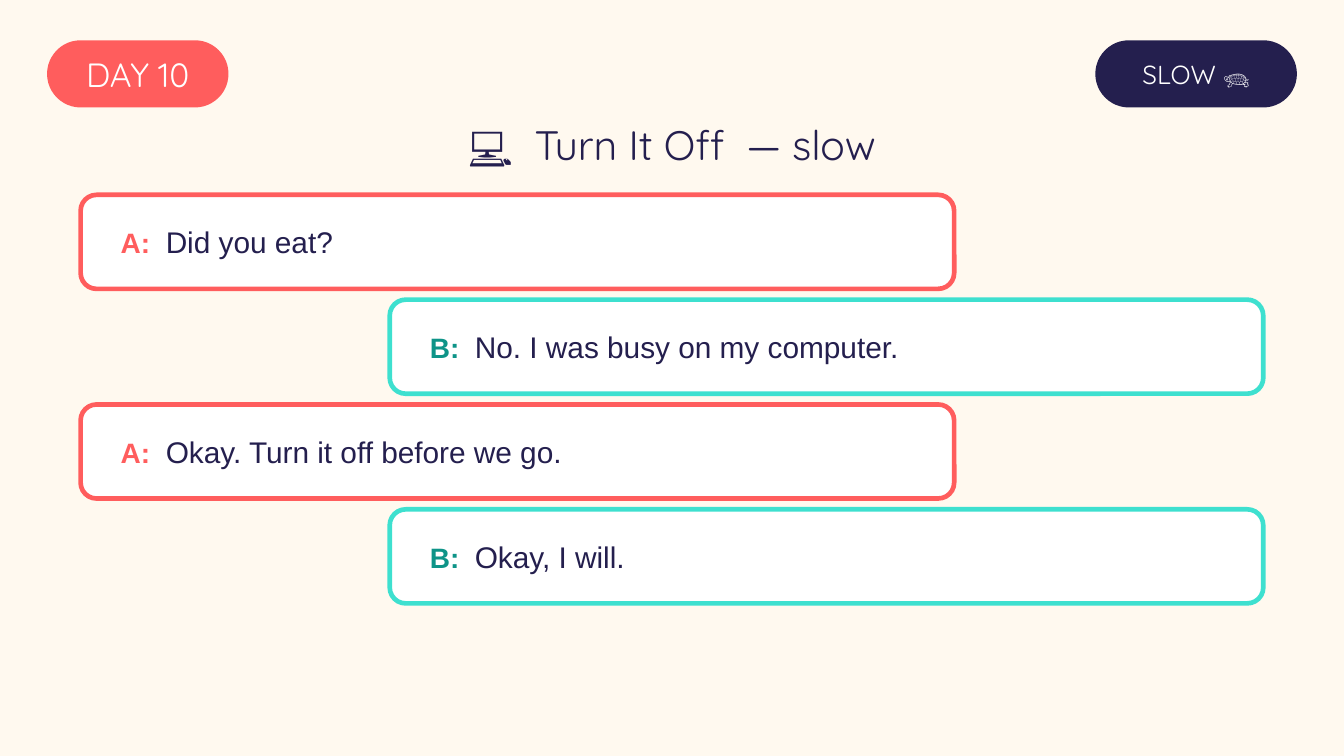
"""Build the slow dialogue slide for day 10."""
import dataclasses
import typing

import pptx
import pptx.dml.color
import pptx.enum.shapes
import pptx.enum.text
import pptx.util

RGBColor = pptx.dml.color.RGBColor
Align = pptx.enum.text.PP_ALIGN

CREAM = RGBColor(0xFF, 0xF9, 0xEF)
CORAL = RGBColor(0xFF, 0x5D, 0x5D)
NAVY = RGBColor(0x24, 0x1F, 0x4E)
WHITE = RGBColor(0xFF, 0xFF, 0xFF)
AQUA = RGBColor(0x3E, 0xE0, 0xCF)
TEAL = RGBColor(0x0E, 0x94, 0x88)

SCALE = 4572
PAGE_WIDE, PAGE_HIGH = 2000, 1125
HEAD = "Quicksand"
BODY = "Arial"
TOP, STEP = 290, 156
WIDE, HIGH = 1300, 140
INSET = 40


class Box(typing.NamedTuple):
    """Place and size in px."""
    left: int
    top: int
    width: int
    height: int

    def emu(self) -> list[int]:
        """Return the four lengths in EMU."""
        return [n * SCALE for n in self]


@dataclasses.dataclass(frozen=True)
class Run:
    """Words in one format."""
    text: str
    size: int
    color: RGBColor
    font: str = HEAD
    bold: bool = False


@dataclasses.dataclass(frozen=True)
class Pill:
    """A filled label."""
    box: Box
    text: str
    size: int
    fill: RGBColor


@dataclasses.dataclass(frozen=True)
class Voice:
    """A speaker and the look of that side."""
    name: str
    left: int
    line: RGBColor
    ink: RGBColor


@dataclasses.dataclass(frozen=True)
class Turn:
    """One line of the talk."""
    voice: Voice
    text: str


ANN = Voice("A", 120, CORAL, CORAL)
BEN = Voice("B", 580, AQUA, TEAL)

PILLS = [
    Pill(Box(70, 60, 270, 100), "DAY 10", 18, CORAL),
    Pill(Box(1630, 60, 300, 100), "SLOW 🐢", 14, NAVY),
]
TURNS = [
    Turn(ANN, "Did you eat?"),
    Turn(BEN, "No. I was busy on my computer."),
    Turn(ANN, "Okay. Turn it off before we go."),
    Turn(BEN, "Okay, I will."),
]


def add_text(slide, box: Box, *runs: Run, align: Align = Align.CENTER,
             tight: bool = False) -> None:
    """Add a text box with one paragraph, centred in height."""
    frame = slide.shapes.add_textbox(*box.emu()).text_frame
    frame.word_wrap = True
    frame.vertical_anchor = pptx.enum.text.MSO_ANCHOR.MIDDLE
    if tight:
        frame.margin_left = frame.margin_right = 0
        frame.margin_top = frame.margin_bottom = 0
    para = frame.paragraphs[0]
    para.alignment = align
    for item in runs:
        run = para.add_run()
        run.text = item.text
        run.font.name = item.font
        run.font.size = pptx.util.Pt(item.size)
        run.font.bold = item.bold
        run.font.color.rgb = item.color


def add_card(slide, box: Box, fill: RGBColor, bend: float,
             line: RGBColor | None = None) -> None:
    """Add a rounded box, with a border if a line colour is given."""
    card = slide.shapes.add_shape(
        pptx.enum.shapes.MSO_SHAPE.ROUNDED_RECTANGLE, *box.emu())
    card.adjustments[0] = bend
    card.shadow.inherit = False
    card.fill.solid()
    card.fill.fore_color.rgb = fill
    if line is None:
        card.line.fill.background()
    else:
        card.line.color.rgb = line
        card.line.width = pptx.util.Pt(2.5)


def add_pill(slide, pill: Pill) -> None:
    """Add a pill and its label."""
    add_card(slide, pill.box, pill.fill, 0.5)
    add_text(slide, pill.box, Run(pill.text, pill.size, WHITE), tight=True)


def add_turn(slide, turn: Turn, top: int) -> None:
    """Add a speech card with the speaker and the words."""
    voice = turn.voice
    add_card(slide, Box(voice.left, top, WIDE, HIGH), WHITE, 0.17, voice.line)
    add_text(slide, Box(voice.left + INSET, top, WIDE - 2 * INSET, HIGH),
             Run(f"{voice.name}:  ", 15, voice.ink, BODY, True),
             Run(turn.text, 16, NAVY, BODY), align=Align.LEFT)


def main() -> None:
    """Build and save the deck."""
    deck = pptx.Presentation()
    deck.slide_width = PAGE_WIDE * SCALE
    deck.slide_height = PAGE_HIGH * SCALE
    slide = deck.slides.add_slide(deck.slide_layouts[6])
    slide.background.fill.solid()
    slide.background.fill.fore_color.rgb = CREAM
    for pill in PILLS:
        add_pill(slide, pill)
    add_text(slide, Box(0, 164, PAGE_WIDE, 100),
             Run("💻  Turn It Off  — slow", 22, NAVY))
    for row, turn in enumerate(TURNS):
        add_turn(slide, turn, TOP + row * STEP)
    deck.save("out.pptx")


if __name__ == "__main__":
    main()
